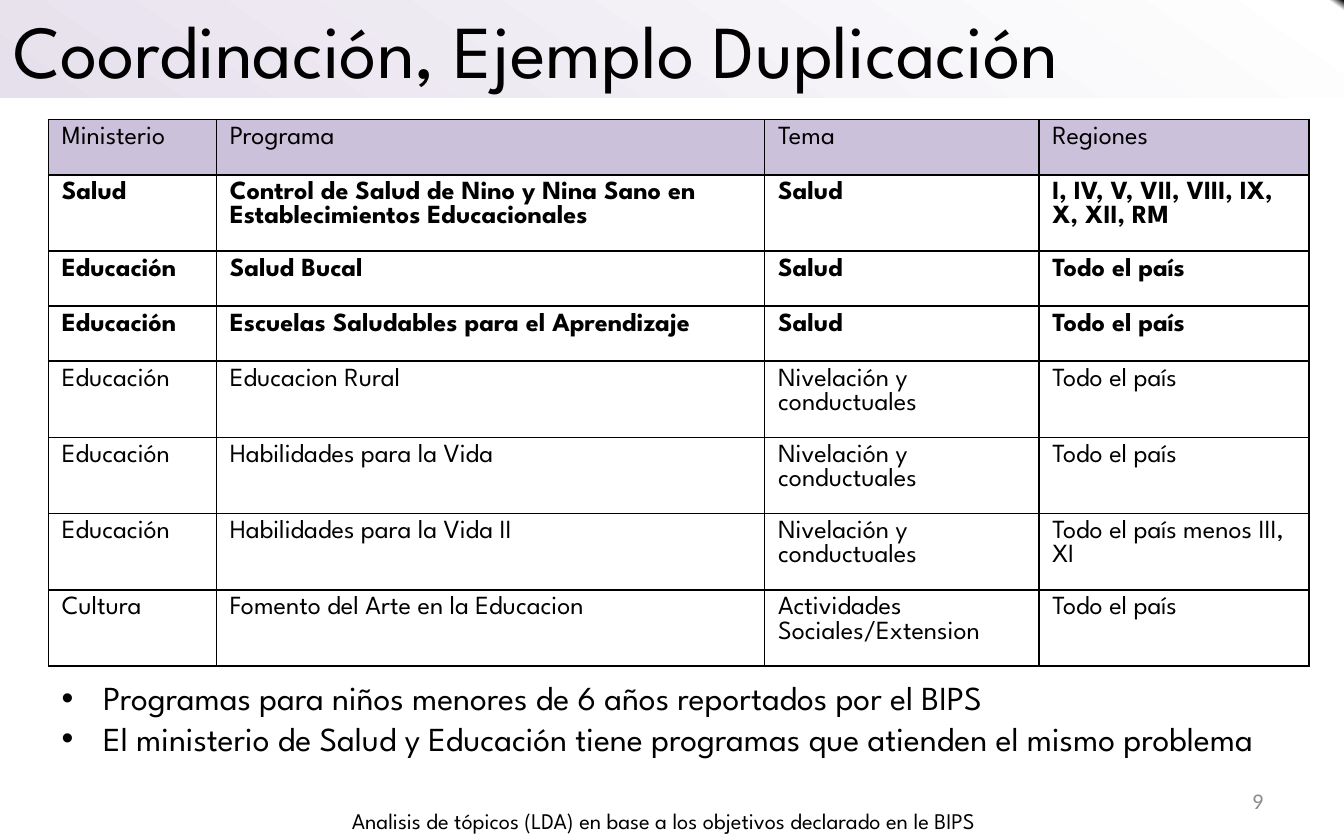
from dataclasses import dataclass

from lxml import etree
from pptx import Presentation
from pptx.dml.color import RGBColor
from pptx.enum.shapes import MSO_SHAPE
from pptx.enum.text import MSO_ANCHOR, PP_ALIGN
from pptx.oxml.ns import qn
from pptx.util import Inches, Pt

RECTANGLE = MSO_SHAPE.RECTANGLE
TOP, MIDDLE = MSO_ANCHOR.TOP, MSO_ANCHOR.MIDDLE
LEFT, CENTER, RIGHT = PP_ALIGN.LEFT, PP_ALIGN.CENTER, PP_ALIGN.RIGHT


@dataclass(frozen=True)
class Theme:
    """Hold the fonts, colours and type sizes of the slide."""
    font: str = "League Spartan"
    number_font: str = "Calibri"
    ink: str = "000000"
    muted: str = "8C8C8C"
    header: str = "CCC1DA"
    banner: tuple = ((0, "E6E0EC"), (99, "FFFFFF"), (100, "000000"), (100, "FFFFFF"))
    banner_angle: int = 55
    title_size: int = 40
    bullet_size: int = 18
    table_size: int = 14
    small_size: int = 12
    border: int = 1


THEME = Theme()
COLUMN_WIDTHS = (1.25, 4.08, 2.04, 2.01)
ROW_HEIGHT = 0.41
BOLD_ROWS = range(1, 4)
PROGRAMS = (
    ("Ministerio", "Programa", "Tema", "Regiones"),
    ("Salud", "Control de Salud de Nino y Nina Sano en Establecimientos Educacionales",
     "Salud", "I, IV, V, VII, VIII, IX, X, XII, RM"),
    ("Educación", "Salud Bucal", "Salud", "Todo el país"),
    ("Educación", "Escuelas Saludables para el Aprendizaje", "Salud", "Todo el país"),
    ("Educación", "Educacion Rural", "Nivelación y conductuales", "Todo el país"),
    ("Educación", "Habilidades para la Vida", "Nivelación y conductuales", "Todo el país"),
    ("Educación", "Habilidades para la Vida II", "Nivelación y conductuales",
     "Todo el país menos III, XI"),
    ("Cultura", "Fomento del Arte en la Educacion", "Actividades Sociales/Extension",
     "Todo el país"),
)
FINDINGS = (
    "Programas para niños menores de 6 años reportados por el BIPS",
    "El ministerio de Salud y Educación tiene programas que atienden el mismo problema",
)


def write(para, text, size, font=THEME.font, color=THEME.ink, bold=False, align=LEFT):
    """Add formatted text to a paragraph."""
    para.alignment = align
    span = para.add_run()
    span.text = text
    span.font.name = font
    span.font.size = Pt(size)
    span.font.bold = bold
    span.font.color.rgb = RGBColor.from_string(color)


def add_banner(page, text, left, top, width, height):
    """Add the title band with its gradient."""
    banner = page.shapes.add_shape(
        RECTANGLE, Inches(left), Inches(top), Inches(width), Inches(height))
    banner.shadow.inherit = False
    banner.line.fill.background()
    banner.fill.gradient()
    banner.fill.gradient_angle = THEME.banner_angle
    stops = banner.fill._fill._gradFill.find(qn("a:gsLst"))
    for stop in list(stops):
        stops.remove(stop)
    for position, color in THEME.banner:
        stop = etree.SubElement(stops, qn("a:gs"), pos=str(position * 1000))
        etree.SubElement(stop, qn("a:srgbClr"), val=color)
    banner.text_frame.word_wrap = True
    banner.text_frame.vertical_anchor = MIDDLE
    write(banner.text_frame.paragraphs[0], text, THEME.title_size)


def add_text(page, lines, left, top, width, height, anchor=TOP, bullet=False, **style):
    """Add a text box with one paragraph per line."""
    box = page.shapes.add_textbox(Inches(left), Inches(top), Inches(width), Inches(height))
    frame = box.text_frame
    frame.word_wrap = True
    frame.vertical_anchor = anchor
    for index, line in enumerate(lines):
        para = frame.add_paragraph() if index else frame.paragraphs[0]
        write(para, line, **style)
        if bullet:
            add_bullet(para, 0.31)


def add_bullet(para, indent):
    """Give a paragraph a hanging bullet."""
    properties = para._p.get_or_add_pPr()
    properties.set("marL", str(Inches(indent)))
    properties.set("indent", str(-Inches(indent)))
    etree.SubElement(properties, qn("a:buFont"), typeface="Arial")
    etree.SubElement(properties, qn("a:buChar"), char="•")


def add_borders(cell):
    """Draw a line on all four sides of a cell."""
    properties = cell._tc.get_or_add_tcPr()
    for index, side in enumerate(("a:lnL", "a:lnR", "a:lnT", "a:lnB")):
        line = etree.Element(qn(side), w=str(Pt(THEME.border)))
        fill = etree.SubElement(line, qn("a:solidFill"))
        etree.SubElement(fill, qn("a:srgbClr"), val=THEME.ink)
        properties.insert(index, line)


def add_program_table(page, left, top):
    """Add the table of programmes by ministry."""
    table = page.shapes.add_table(
        len(PROGRAMS), len(COLUMN_WIDTHS), Inches(left), Inches(top),
        Inches(sum(COLUMN_WIDTHS)), Inches(ROW_HEIGHT * len(PROGRAMS))).table
    table.first_row = table.horz_banding = False
    for column, width in zip(table.columns, COLUMN_WIDTHS):
        column.width = Inches(width)
    for row_index, texts in enumerate(PROGRAMS):
        table.rows[row_index].height = Inches(ROW_HEIGHT)
        for column_index, text in enumerate(texts):
            cell = table.cell(row_index, column_index)
            if row_index == 0:
                cell.fill.solid()
                cell.fill.fore_color.rgb = RGBColor.from_string(THEME.header)
            else:
                cell.fill.background()
            add_borders(cell)
            write(cell.text_frame.paragraphs[0], text, THEME.table_size,
                  bold=row_index in BOLD_ROWS)


def main():
    """Build and save the slide."""
    deck = Presentation()
    deck.slide_width, deck.slide_height = Inches(10), Inches(6.25)
    page = deck.slides.add_slide(deck.slide_layouts[6])
    add_banner(page, "Coordinación, Ejemplo Duplicación", 0, 0, 10, 0.73)
    add_text(page, ["9"], 7.17, 5.79, 2.33, 0.33, anchor=MIDDLE, size=THEME.small_size,
             font=THEME.number_font, color=THEME.muted, align=RIGHT)
    add_program_table(page, 0.36, 0.89)
    add_text(page, ["Analisis de tópicos (LDA) en base a los objetivos declarado en le BIPS"],
             0.01, 5.96, 9.86, 0.3, size=THEME.small_size, align=CENTER)
    add_text(page, FINDINGS, 0.36, 4.99, 9.39, 1.01, bullet=True, size=THEME.bullet_size)
    deck.save("out.pptx")


if __name__ == "__main__":
    main()
